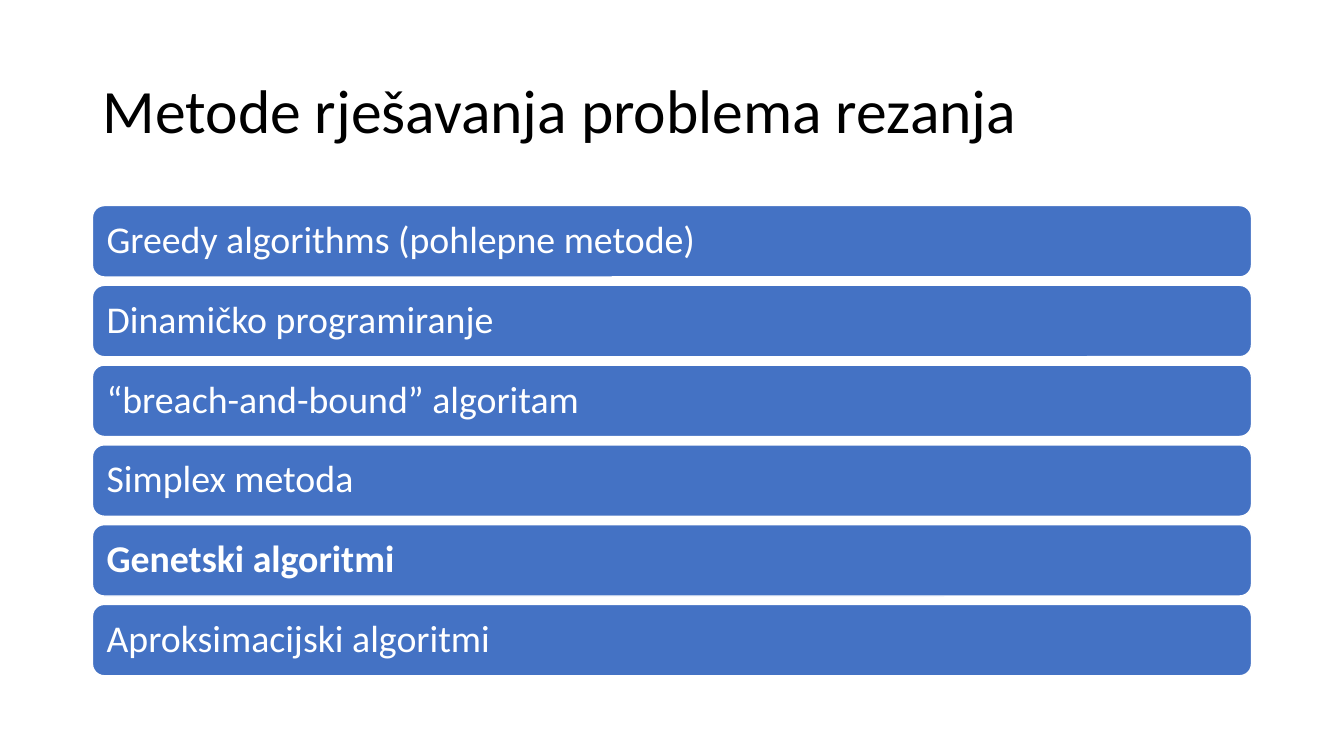
from pptx import Presentation
from pptx.dml.color import RGBColor
from pptx.enum.shapes import MSO_SHAPE
from pptx.enum.text import MSO_ANCHOR, MSO_AUTO_SIZE, PP_ALIGN
from pptx.util import Cm, Pt

TITLE = "Metode rješavanja problema rezanja"
METHODS = [
    "Greedy algorithms (pohlepne metode)",
    "Dinamičko programiranje",
    "“breach-and-bound” algoritam",
    "Simplex metoda",
    "Genetski algoritmi",
    "Aproksimacijski algoritmi",
]
HIGHLIGHTED = "Genetski algoritmi"

BLACK = RGBColor(0x00, 0x00, 0x00)
WHITE = RGBColor(0xFF, 0xFF, 0xFF)
BLUE = RGBColor(0x44, 0x72, 0xC4)
ROUNDED = MSO_SHAPE.ROUNDED_RECTANGLE
MIDDLE = MSO_ANCHOR.MIDDLE
LEFT_ALIGNED = PP_ALIGN.LEFT
NO_AUTOFIT = MSO_AUTO_SIZE.NONE
TITLE_ONLY_LAYOUT = 5

LEFT, WIDTH = Cm(2.33), Cm(29.21)
TITLE_TOP, TITLE_HEIGHT = Cm(1.01), Cm(3.68)
BARS_TOP, BAR_HEIGHT, BAR_PITCH = Cm(5.18), Cm(1.8), Cm(2.01)
BAR_MARGIN = Cm(0.27)

TITLE_FONT = {"name": "Calibri", "size": Pt(44), "bold": False}
BAR_FONT = {"name": "Calibri", "size": Pt(27)}


def set_attributes(target, values):
    for name, value in values.items():
        setattr(target, name, value)


def write_text(shape, text, font_format, color):
    frame = shape.text_frame
    frame.text = text
    set_attributes(frame, {"word_wrap": True, "auto_size": NO_AUTOFIT,
                           "vertical_anchor": MIDDLE})
    paragraph = frame.paragraphs[0]
    set_attributes(paragraph, {"alignment": LEFT_ALIGNED, "line_spacing": 0.9})
    font = paragraph.runs[0].font
    set_attributes(font, font_format)
    font.color.rgb = color


def add_method_bar(slide, row, method):
    bar = slide.shapes.add_shape(ROUNDED, LEFT, BARS_TOP + row * BAR_PITCH,
                                 WIDTH, BAR_HEIGHT)
    bar.shadow.inherit = False
    bar.fill.solid()
    bar.fill.fore_color.rgb = BLUE
    bar.line.color.rgb = WHITE
    bar.line.width = Pt(1)
    for side in ("left", "right", "top", "bottom"):
        setattr(bar.text_frame, f"margin_{side}", BAR_MARGIN)
    write_text(bar, method, {**BAR_FONT, "bold": method == HIGHLIGHTED}, WHITE)


def main():
    presentation = Presentation()
    set_attributes(presentation, {"slide_width": Cm(33.87), "slide_height": Cm(19.05)})
    layout = presentation.slide_layouts[TITLE_ONLY_LAYOUT]
    slide = presentation.slides.add_slide(layout)

    title = slide.shapes.title
    set_attributes(title, {"left": LEFT, "top": TITLE_TOP,
                           "width": WIDTH, "height": TITLE_HEIGHT})
    write_text(title, TITLE, TITLE_FONT, BLACK)

    for row, method in enumerate(METHODS):
        add_method_bar(slide, row, method)

    presentation.save("out.pptx")


if __name__ == "__main__":
    main()
